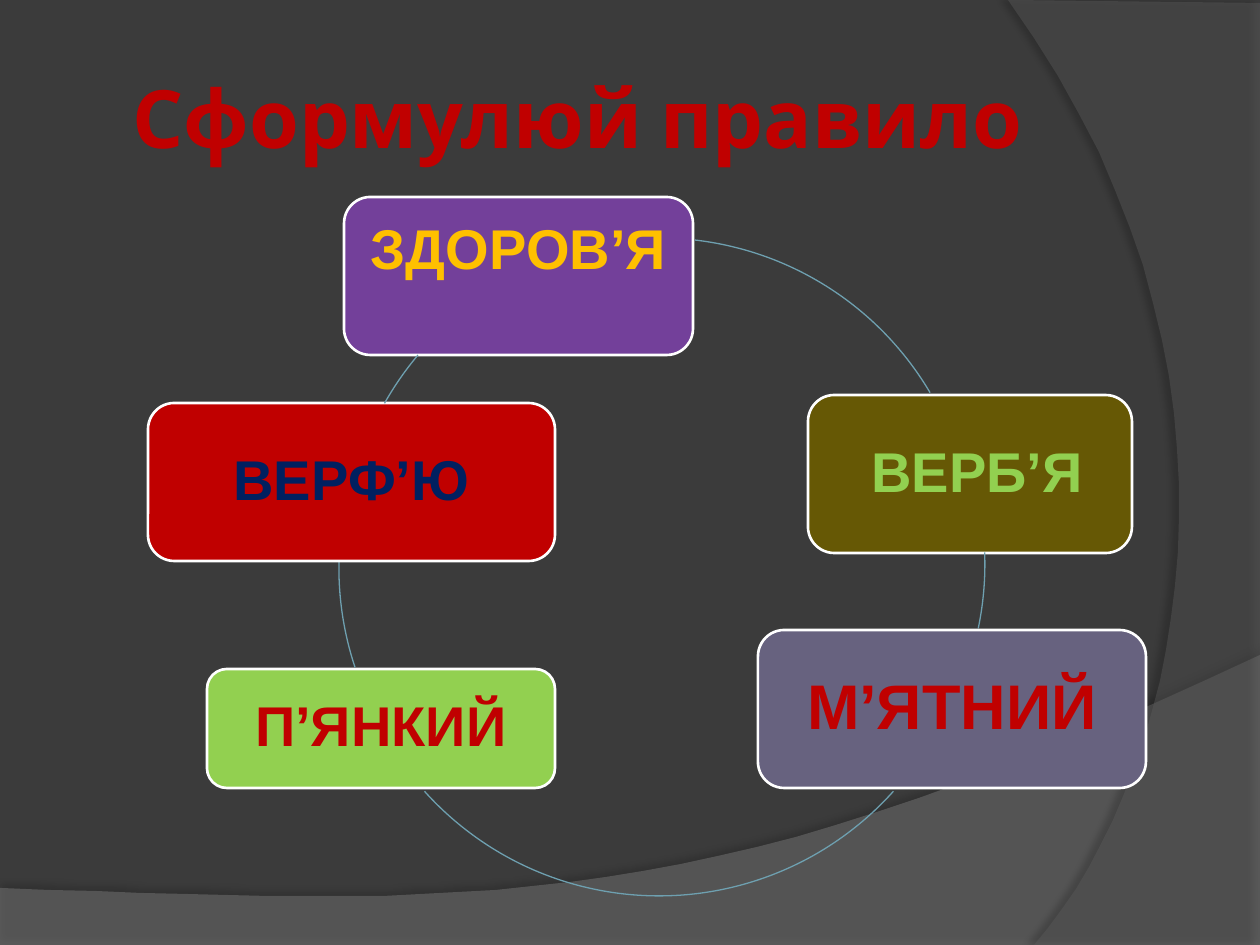
from dataclasses import dataclass

import lxml.etree
import pptx
import pptx.dml.color
import pptx.enum.shapes
import pptx.enum.text
import pptx.oxml.ns
import pptx.util

RGB = pptx.dml.color.RGBColor
MSO_SHAPE = pptx.enum.shapes.MSO_SHAPE
ANCHOR = pptx.enum.text.MSO_ANCHOR
qn = pptx.oxml.ns.qn

EMU_PER_PX = 914400 / 126
RING_SIZE = 630

CHARCOAL = RGB(0x3B, 0x3B, 0x3B)
GREY = RGB(0x7F, 0x7F, 0x7F)
DARK_GREY = RGB(0x5E, 0x5E, 0x5E)
WHITE = RGB(0xFF, 0xFF, 0xFF)
RED = RGB(0xC0, 0x00, 0x00)
GREEN = RGB(0x92, 0xD0, 0x50)
GOLD = RGB(0xFF, 0xC0, 0x00)
NAVY = RGB(0x00, 0x20, 0x60)
PURPLE = RGB(0x73, 0x40, 0x9A)
OLIVE = RGB(0x66, 0x58, 0x05)
SLATE = RGB(0x67, 0x62, 0x7F)
TEAL = RGB(0x6E, 0xA0, 0xB0)

Point = tuple[int, int]


@dataclass(frozen=True)
class Wave:
    corners: list[Point]
    curve: list[Point]
    color: RGB
    opacity: int
    shadow_opacity: int
    shadow_distance: float
    shadow_angle: int


@dataclass(frozen=True)
class WordBox:
    text: str
    x: int
    y: int
    w: int
    h: int
    fill: RGB
    color: RGB
    size: int = 32
    margin: int = 16
    indent: int = 0
    anchor: ANCHOR = ANCHOR.MIDDLE


@dataclass(frozen=True)
class Arc:
    x: int
    y: int
    start: float
    end: float


WAVES = [
    Wave([(0, 888), (0, 945), (1260, 945), (1260, 655)],
         [(704, 919), (493, 906), (0, 888)], GREY, 45, 35, 3.5, 270),
    Wave([(1260, 3), (1260, 945), (1034, 945)],
         [(1178, 780), (1283, 378), (1008, 0)], DARK_GREY, 40, 45, 4, 180),
]
WORDS = [
    WordBox("ЗДОРОВ’Я", 344, 197, 349, 158, PURPLE, GOLD, anchor=ANCHOR.TOP),
    WordBox("ВЕРБ’Я", 808, 395, 324, 158, OLIVE, GREEN, indent=14),
    WordBox("М’ЯТНИЙ", 758, 630, 388, 158, SLATE, RED, size=36, margin=19),
    WordBox("П’ЯНКИЙ", 207, 669, 348, 119, GREEN, RED),
    WordBox("ВЕРФ’Ю", 148, 403, 407, 158, RED, NAVY),
]
ARCS = [
    Arc(344, 238, 276.6, 329.4),
    Arc(355, 249, 357.9, 11.8),
    Arc(344, 266, 41.9, 138.1),
    Arc(339, 253, 161.6, 181.1),
    Arc(344, 243, 209.4, 220.1),
]


def px(value: float) -> pptx.util.Emu:
    return pptx.util.Emu(round(value * EMU_PER_PX))


def bezier(start: Point, curve: list[Point], steps: int = 30) -> list[tuple[float, float]]:
    def at(t: float, axis: int) -> float:
        a, b, c, d = (point[axis] for point in (start, *curve))
        u = 1 - t
        return u**3 * a + 3 * u * u * t * b + 3 * u * t * t * c + t**3 * d

    return [(at(i / steps, 0), at(i / steps, 1)) for i in range(1, steps + 1)]


def add_alpha(color, percent: int) -> None:
    lxml.etree.SubElement(color, qn("a:alpha"), val=str(percent * 1000))


def add_wave(s, wave: Wave) -> None:
    builder = s.shapes.build_freeform(*wave.corners[0], scale=EMU_PER_PX)
    builder.add_line_segments(wave.corners[1:] + bezier(wave.corners[-1], wave.curve))
    sp = builder.convert_to_shape()
    sp.fill.solid()
    sp.fill.fore_color.rgb = wave.color
    sp.line.fill.background()
    sp.shadow.inherit = False
    props = sp._element.spPr
    add_alpha(props.find(qn("a:solidFill")).find(qn("a:srgbClr")), wave.opacity)
    shadow = lxml.etree.SubElement(
        props.find(qn("a:effectLst")), qn("a:outerShdw"),
        blurRad=str(pptx.util.Pt(4)), dist=str(pptx.util.Pt(wave.shadow_distance)),
        dir=str(wave.shadow_angle * 60000), algn="ctr", rotWithShape="0")
    add_alpha(lxml.etree.SubElement(shadow, qn("a:srgbClr"), val="000000"),
              wave.shadow_opacity)


def write(tf, text: str, font: str, size: int, color: RGB) -> None:
    tf.text = text
    p = tf.paragraphs[0]
    p.alignment = pptx.enum.text.PP_ALIGN.CENTER
    p.font.name = font
    p.font.size = pptx.util.Pt(size)
    p.font.bold = True
    p.font.color.rgb = color


def add_title(s, text: str) -> None:
    sp = s.shapes.title
    sp.left, sp.top, sp.width, sp.height = px(63), px(38), px(1029), px(157)
    tf = sp.text_frame
    tf.auto_size = pptx.enum.text.MSO_AUTO_SIZE.NONE
    tf.vertical_anchor = ANCHOR.MIDDLE
    tf.margin_left = tf.margin_right = tf.margin_top = tf.margin_bottom = px(6)
    write(tf, text, "Cabin", 46, RED)
    s.shapes._spTree.append(sp._element)


def add_word(s, word: WordBox) -> None:
    sp = s.shapes.add_shape(MSO_SHAPE.ROUNDED_RECTANGLE,
                            px(word.x), px(word.y), px(word.w), px(word.h))
    sp.shadow.inherit = False
    sp.fill.solid()
    sp.fill.fore_color.rgb = word.fill
    sp.line.color.rgb = WHITE
    sp.line.width = pptx.util.Pt(1.5)
    tf = sp.text_frame
    tf.word_wrap = True
    tf.vertical_anchor = word.anchor
    tf.margin_left = px(word.margin + word.indent)
    tf.margin_right = tf.margin_top = tf.margin_bottom = px(word.margin)
    write(tf, word.text, "Arial", word.size, word.color)
    tf.paragraphs[0].line_spacing = 0.9


def add_arc(s, arc: Arc) -> None:
    sp = s.shapes.add_shape(MSO_SHAPE.ARC, px(arc.x), px(arc.y),
                            px(RING_SIZE), px(RING_SIZE))
    sp.adjustments[0] = arc.start * 0.6
    sp.adjustments[1] = arc.end * 0.6
    sp.shadow.inherit = False
    sp.fill.background()
    sp.line.color.rgb = TEAL
    sp.line.width = pptx.util.Pt(0.75)


def main() -> None:
    prs = pptx.Presentation()
    prs.slide_width, prs.slide_height = px(1260), px(945)
    s = prs.slides.add_slide(prs.slide_layouts[5])
    s.background.fill.solid()
    s.background.fill.fore_color.rgb = CHARCOAL
    for wave in WAVES:
        add_wave(s, wave)
    add_title(s, "Сформулюй правило")
    for word, arc in zip(WORDS, ARCS):
        add_word(s, word)
        add_arc(s, arc)
    prs.save("out.pptx")


if __name__ == "__main__":
    main()
